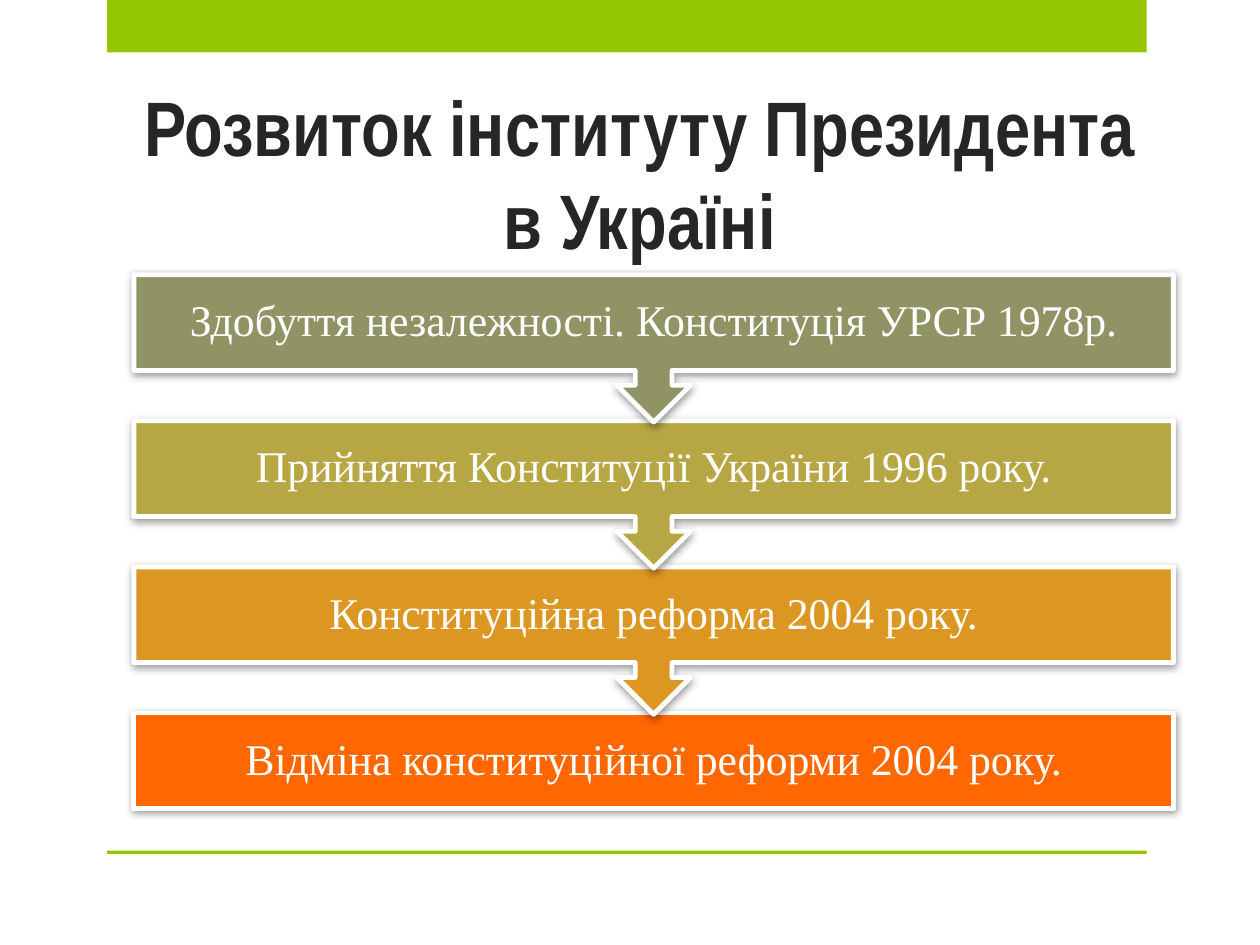
from lxml.etree import SubElement
from pptx import Presentation
from pptx.dml.color import RGBColor
from pptx.enum.shapes import MSO_SHAPE as Preset
from pptx.enum.text import MSO_ANCHOR as Anchor, MSO_AUTO_SIZE as AutoSize, PP_ALIGN as Align
from pptx.oxml.ns import qn
from pptx.util import Pt

COLORS = {"accent": "94C600", "title": "262626", "white": "FFFFFF", "shadow": "000000",
          "olive": "909465", "khaki": "B7A744", "amber": "DB9722", "orange": "FF6700"}


def write(shape, text, *, font, size, color, bold=False, anchor=Anchor.MIDDLE,
          spacing=1.0, inset_x=7.2, inset_y=3.6):
    frame = shape.text_frame
    frame.word_wrap = True
    frame.auto_size = AutoSize.NONE
    frame.vertical_anchor = anchor
    frame.margin_left = frame.margin_right = Pt(inset_x)
    frame.margin_top = frame.margin_bottom = Pt(inset_y)
    paragraph = frame.paragraphs[0]
    paragraph.alignment = Align.CENTER
    paragraph.line_spacing = spacing
    run = paragraph.add_run()
    run.text = text
    run.font.name = font
    run.font.size = Pt(size)
    run.font.bold = bold
    run.font.color.rgb = RGBColor.from_string(COLORS[color])


def add_block(preset, left, top, width, height, fill):
    block = slide.shapes.add_shape(preset, Pt(left), Pt(top), Pt(width), Pt(height))
    block.shadow.inherit = False
    block.fill.solid()
    block.fill.fore_color.rgb = RGBColor.from_string(COLORS[fill])
    block.line.fill.background()
    return block


prs = Presentation()
prs.slide_width, prs.slide_height = Pt(720), Pt(540)
slide = prs.slides.add_slide(prs.slide_layouts[5])

# Top band and bottom rule
for band_top, band_height in ((0, 30), (486, 2)):
    add_block(Preset.RECTANGLE, 61.2, band_top, 594, band_height, "accent")

# Title
title = slide.shapes.title
title.left, title.top, title.width, title.height = Pt(65.5), Pt(26), Pt(600.5), Pt(129)
write(title, "Розвиток інституту Президента в Україні", font="Arial Narrow",
      size=44.1, color="title", bold=True, anchor=Anchor.BOTTOM)

# Stages, drawn from the last upwards so that each arrow lies over the next box
stages = [
    ("Здобуття незалежності. Конституція УРСР 1978р.", "olive"),
    ("Прийняття Конституції України 1996 року.", "khaki"),
    ("Конституційна реформа 2004 року.", "amber"),
    ("Відміна конституційної реформи 2004 року.", "orange"),
]
first_top, step = 157, 83.5
last = len(stages) - 1
for index, (stage_text, fill) in reversed(list(enumerate(stages))):
    preset, height = ((Preset.RECTANGLE, 54.7) if index == last
                      else (Preset.DOWN_ARROW_CALLOUT, 84.2))
    stage = add_block(preset, 76.5, first_top + index * step, 594, height, fill)
    stage.line.color.rgb = RGBColor.from_string(COLORS["white"])
    stage.line.width = Pt(2.75)
    write(stage, stage_text, font="Times New Roman", size=25, color="white",
          spacing=0.9, inset_x=13.5, inset_y=13.5)

    # Soft shadow below the stage
    effects = stage._element.spPr.find(qn("a:effectLst"))
    shadow = SubElement(effects, qn("a:outerShdw"), blurRad=str(Pt(4)), dist=str(Pt(1)),
                        dir=str(88 * 60000), rotWithShape="0")
    tint = SubElement(shadow, qn("a:srgbClr"), val=COLORS["shadow"])
    SubElement(tint, qn("a:alpha"), val="40000")

prs.save("out.pptx")
